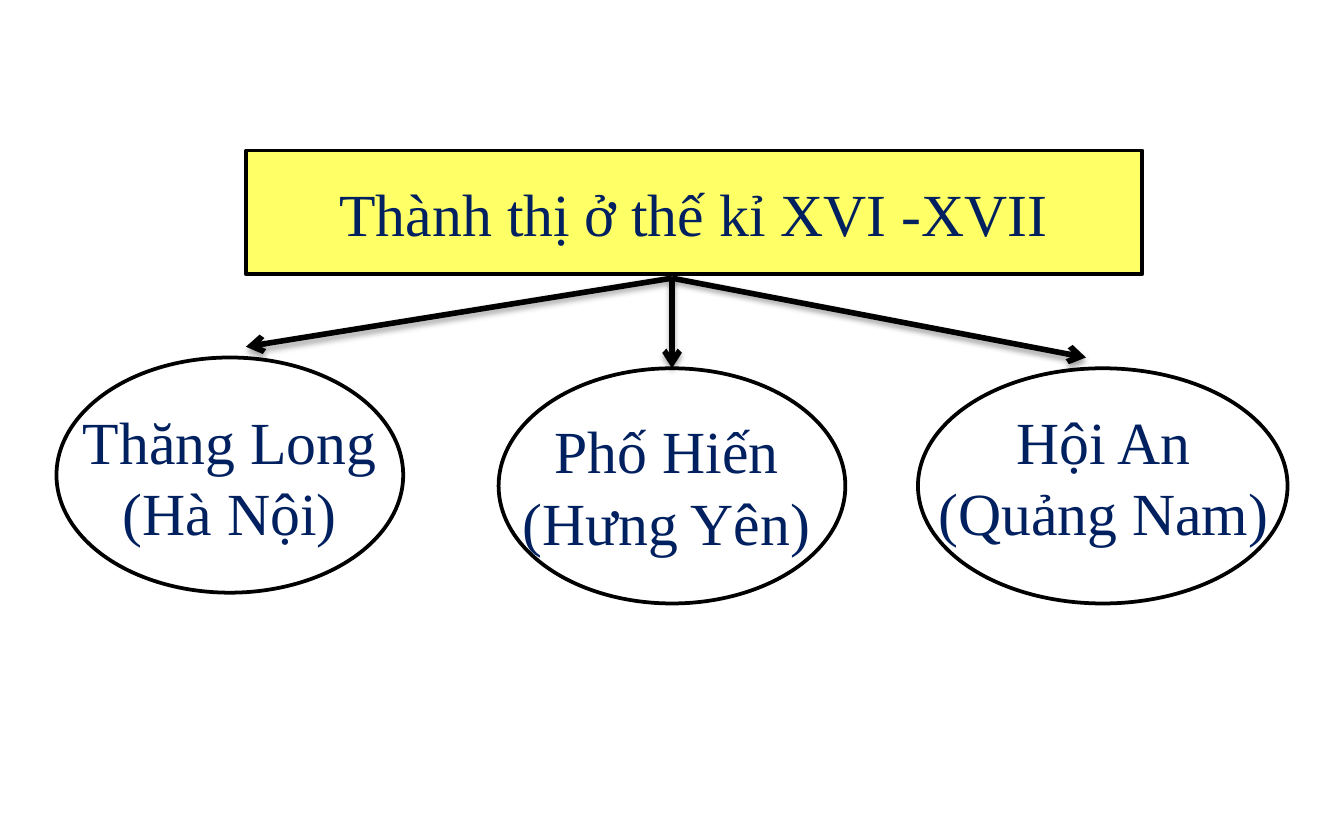
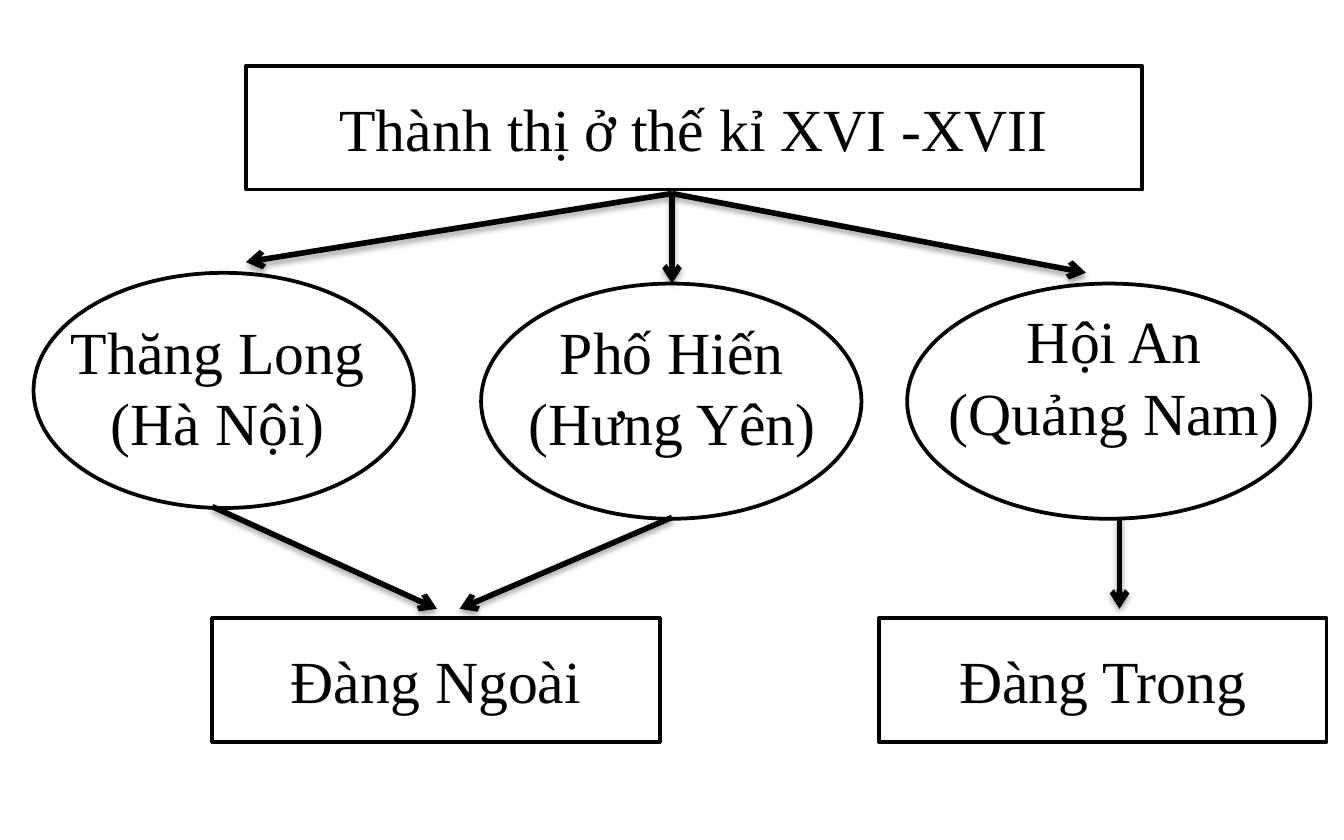
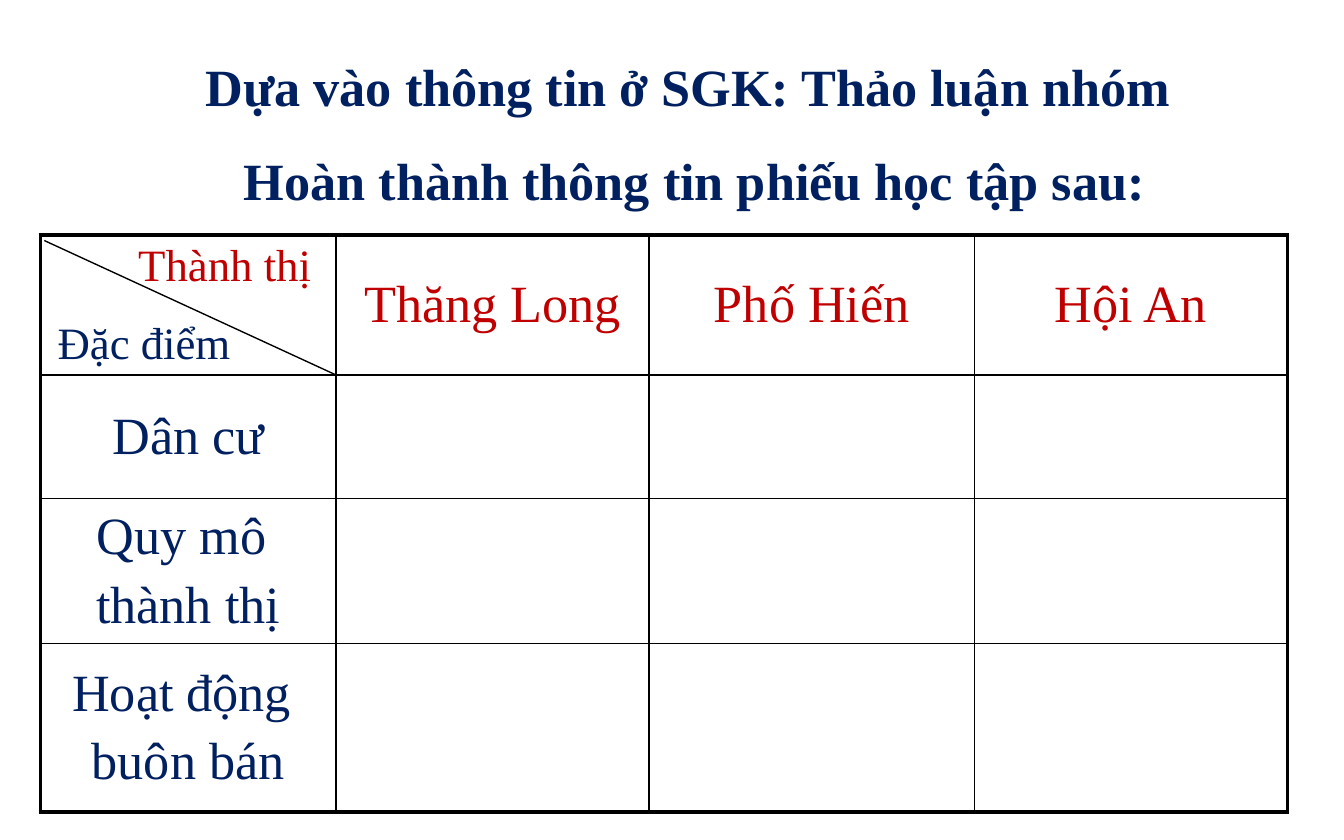
import pptx
import pptx.util
import pptx.dml.color
import pptx.enum.shapes
import pptx.enum.text
import pptx.oxml
import pptx.oxml.ns

Inches = pptx.util.Inches
Pt = pptx.util.Pt
MSO_SHAPE = pptx.enum.shapes.MSO_SHAPE
ALIGN = pptx.enum.text.PP_ALIGN
ANCHOR = pptx.enum.text.MSO_ANCHOR
AUTO_SIZE = pptx.enum.text.MSO_AUTO_SIZE

COLORS = {"black": "000000", "white": "FFFFFF", "navy": "002060",
          "red": "C00000", "yellow": "FFFF66"}
FONT = "Times New Roman"
FORMATS = {
    "diagram": {"size": Pt(32), "name": FONT},
    "heading": {"size": Pt(28), "name": FONT, "bold": True},
    "table": {"size": Pt(28), "name": FONT},
    "corner": {"size": Pt(24), "name": FONT},
}
TITLE = "Thành thị ở thế kỉ XVI -XVII"
TOWNS = [["Thăng Long", "(Hà Nội)"],
         ["Phố Hiến", "(Hưng Yên)"],
         ["Hội An", "(Quảng Nam)"]]
FEATURES = [["Dân cư"], ["Quy mô ", "thành thị"], ["Hoạt động ", "buôn bán"]]
NS = pptx.oxml.ns.nsdecls("a")


def rgb(color):
    return pptx.dml.color.RGBColor.from_string(COLORS[color])


def write(tf, lines, style, color, **paragraph):
    for i, line in enumerate(lines):
        p = tf.paragraphs[0] if i == 0 else tf.add_paragraph()
        for key, value in paragraph.items():
            if i or key != "space_before":
                setattr(p, key, value)
        r = p.add_run()
        r.text = line
        for key, value in FORMATS[style].items():
            setattr(r.font, key, value)
        r.font.color.rgb = rgb(color)


def add_node(s, kind, box, fill="white", text=None, color="black"):
    sp = s.shapes.add_shape(kind, *map(Inches, box))
    sp.shadow.inherit = False
    sp.fill.solid()
    sp.fill.fore_color.rgb = rgb(fill)
    sp.line.color.rgb = rgb("black")
    sp.line.width = Pt(2)
    if text:
        sp.text_frame.vertical_anchor = ANCHOR.MIDDLE
        write(sp.text_frame, [text], "diagram", color, alignment=ALIGN.CENTER)


def add_text(s, box, lines, style, color, wrap=True, **paragraph):
    tf = s.shapes.add_textbox(*map(Inches, box)).text_frame
    tf.word_wrap = wrap
    tf.auto_size = AUTO_SIZE.SHAPE_TO_FIT_TEXT
    write(tf, lines, style, color, **paragraph)


def add_line(s, start, end, width, effect=""):
    c = s.shapes.add_connector(pptx.enum.shapes.MSO_CONNECTOR.STRAIGHT,
                               *map(Inches, (*start, *end)))
    c.line.color.rgb = rgb("black")
    c.line.width = Pt(width)
    c._element.spPr.append(pptx.oxml.parse_xml(
        f"<a:effectLst {NS}>{effect}</a:effectLst>"))
    return c


def add_arrow(s, start, end):
    shadow = (f'<a:outerShdw blurRad="{Pt(3.1)}" dist="{Pt(1.8)}" dir="5400000" '
              f'rotWithShape="0"><a:srgbClr val="{COLORS["black"]}">'
              '<a:alpha val="35000"/></a:srgbClr></a:outerShdw>')
    c = add_line(s, start, end, 3, shadow)
    c.line._get_or_add_ln().append(
        pptx.oxml.parse_xml(f'<a:tailEnd {NS} type="arrow"/>'))


def add_town_tree(s, top, fill, color, ovals, labels):
    add_node(s, MSO_SHAPE.RECTANGLE, (1.83, top, 6.67, 0.92), fill, TITLE, color)
    for (left, width), drop in zip(ovals, (1.54, 1.62, 1.62)):
        add_node(s, MSO_SHAPE.OVAL, (left, top + drop, width, 1.75))
    for town, (left, y, width) in zip(TOWNS, labels):
        add_text(s, (left, y, width, 1.18), town, "diagram", color,
                 alignment=ALIGN.CENTER)
    for x, drop in ((8.08, 1.54), (5, 1.62), (1.83, 1.46)):
        add_arrow(s, (5, top + 0.95), (x, top + drop))


def set_borders(cell, widths):
    tcPr = cell._tc.get_or_add_tcPr()
    for i, (side, width) in enumerate(zip("LRTB", widths)):
        tcPr.insert(i, pptx.oxml.parse_xml(
            f'<a:ln{side} {NS} w="{Pt(width)}"><a:solidFill>'
            f'<a:srgbClr val="{COLORS["black"]}"/></a:solidFill></a:ln{side}>'))


def add_worksheet(s, box, cols, rows):
    table = s.shapes.add_table(len(rows), len(cols), *map(Inches, box)).table
    table.first_row = table.horz_banding = False
    for col, width in zip(table.columns, cols):
        col.width = Inches(width)
    for row, height in zip(table.rows, rows):
        row.height = Inches(height)
    for i in range(len(rows)):
        for j in range(len(cols)):
            cell = table.cell(i, j)
            cell.fill.background()
            cell.vertical_anchor = ANCHOR.MIDDLE
            edges = (j == 0, j == len(cols) - 1, i == 0, i == len(rows) - 1)
            set_borders(cell, [2.25 if edge else 1 for edge in edges])
    headers = [(0, j, town[:1], "red") for j, town in enumerate(TOWNS, 1)]
    headers += [(i, 0, feature, "navy") for i, feature in enumerate(FEATURES, 1)]
    for i, j, lines, color in headers:
        write(table.cell(i, j).text_frame, lines, "table", color,
              alignment=ALIGN.CENTER, space_before=Pt(5.6))


def build_towns(s):
    add_town_tree(s, 1.12, "yellow", "navy",
                  [(0.42, 2.58), (3.71, 2.58), (6.83, 2.75)],
                  [(0.42, 2.96, 2.58), (3.67, 3.03, 2.58), (6.75, 2.96, 2.92)])


def build_regions(s):
    add_town_tree(s, 0.49, "white", "black",
                  [(0.25, 2.83), (3.58, 2.83), (6.75, 3)],
                  [(0.33, 2.29, 2.58), (3.71, 2.29, 2.58), (6.83, 2.21, 2.92)])
    for left, region in ((1.58, "Đàng Ngoài"), (6.54, "Đàng Trong")):
        add_node(s, MSO_SHAPE.RECTANGLE, (left, 4.6, 3.33, 0.92), text=region)
    for start, x in (((8.33, 3.85), 8.33), ((5, 3.85), 3.42), ((1.58, 3.77), 3.25)):
        add_arrow(s, start, (x, 4.53))


def build_worksheet(s):
    add_worksheet(s, (0.3, 1.75, 9.29, 4.33),
                  (2.2, 2.33, 2.42, 2.33), (1.04, 0.92, 1.08, 1.25))
    add_line(s, (0.33, 1.79), (2.5, 2.79), 0.75)
    add_text(s, (0.33, 2.29, 1.49, 0.5), ["Đặc điểm"], "corner", "navy", wrap=False)
    add_text(s, (0.93, 1.71, 1.49, 0.5), ["Thành thị"], "corner", "red", wrap=False)
    add_text(s, (0.75, 0.12, 8.83, 1.43),
             ["Dựa vào thông tin ở SGK: Thảo luận nhóm ",
              "Hoàn thành thông tin phiếu học tập sau:"],
             "heading", "navy", alignment=ALIGN.CENTER, line_spacing=1.5)


def main():
    prs = pptx.Presentation()
    prs.slide_width = Inches(10)
    prs.slide_height = Inches(6.25)
    for build in (build_towns, build_regions, build_worksheet):
        build(prs.slides.add_slide(prs.slide_layouts[6]))
    prs.save("out.pptx")


if __name__ == "__main__":
    main()
